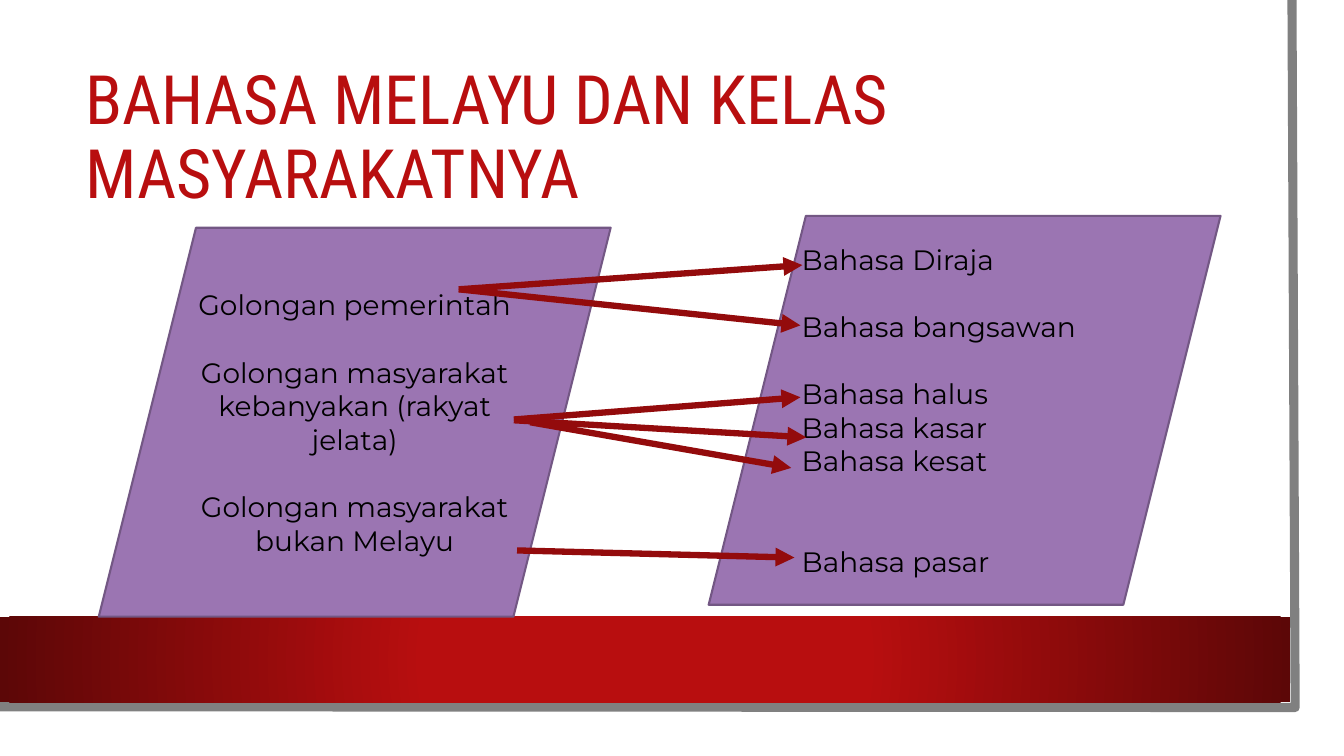
from dataclasses import dataclass

from pptx import Presentation
from pptx.dml.color import RGBColor
from pptx.enum.shapes import MSO_CONNECTOR as Connector, MSO_SHAPE as Preset
from pptx.enum.text import MSO_ANCHOR as Anchor, PP_ALIGN as Align
from pptx.oxml import parse_xml
from pptx.oxml.ns import nsdecls, qn
from pptx.oxml.xmlchemy import OxmlElement
from pptx.shapes.autoshape import Shape
from pptx.slide import Slide
from pptx.util import Cm, Pt

COLORS = {
    "white": "FFFFFF",
    "frame": "808080",
    "red": "B80E0F",
    "dark_red": "5C0707",
    "arrow": "930B0C",
    "purple": "9B75B2",
    "purple_edge": "735784",
    "text": "000000",
}
TITLE_FONT = "Roboto Condensed"
BODY_FONT = "Montserrat"
LINE_GAP = 24  # height of one empty body line, in points


@dataclass
class Entry:
    text: str
    lines_before: int = 0


@dataclass
class Panel:
    left: float
    top: float
    align: Align
    entries: list[Entry]


@dataclass
class Arrow:
    start: tuple[float, float]
    end: tuple[float, float]


PANELS = [
    Panel(2.49, 5.74, Align.CENTER, [
        Entry("Golongan pemerintah"),
        Entry("Golongan masyarakat kebanyakan (rakyat jelata)", 1),
        Entry("Golongan masyarakat bukan Melayu", 1),
    ]),
    Panel(17.86, 5.44, Align.LEFT, [
        Entry("Bahasa Diraja"),
        Entry("Bahasa bangsawan", 1),
        Entry("Bahasa halus", 1),
        Entry("Bahasa kasar"),
        Entry("Bahasa kesat"),
        Entry("Bahasa pasar", 2),
    ]),
]
ARROWS = [
    Arrow((11.56, 7.29), (20.22, 6.68)),
    Arrow((11.56, 7.29), (20.17, 8.2)),
    Arrow((12.95, 10.57), (20.17, 10.01)),
    Arrow((12.95, 10.59), (20.32, 11.02)),
    Arrow((13.36, 10.64), (19.94, 11.79)),
    Arrow((13.03, 13.87), (20.02, 14.05)),
]


def color(name: str) -> RGBColor:
    return RGBColor.from_string(COLORS[name])


def add_block(page: Slide, preset: Preset, left: float, top: float,
              width: float, height: float) -> Shape:
    block = page.shapes.add_shape(preset, Cm(left), Cm(top), Cm(width), Cm(height))
    block.shadow.inherit = False
    block.line.fill.background()
    return block


def draw_backdrop(page: Slide) -> None:
    # White sheet
    sheet = add_block(page, Preset.RECTANGLE, 0, 0, 33.27, 18.47)
    sheet.fill.solid()
    sheet.fill.fore_color.rgb = color("white")

    # Grey edge along the right and bottom
    builder = page.shapes.build_freeform(Cm(32.56), Cm(0))
    corners = [(32.64, 17.83), (-0.08, 17.81)]
    builder.add_line_segments([(Cm(x), Cm(y)) for x, y in corners], close=False)
    edge = builder.convert_to_shape()
    edge.shadow.inherit = False
    edge.fill.background()
    edge.line.color.rgb = color("frame")
    edge.line.width = Pt(6.5)

    # Red band, darker towards its ends
    band = add_block(page, Preset.RECTANGLE, 0, 15.54, 32.51, 2.16)
    band.fill.gradient()
    stops = [(0.34, "red"), (1, "dark_red")]
    for stop, (position, name) in zip(band.fill.gradient_stops, stops):
        stop.position = position
        stop.color.rgb = color(name)
    direction = band.element.spPr.find(qn("a:gradFill")).find(qn("a:lin"))
    direction.getparent().replace(direction, parse_xml(
        f'<a:path {nsdecls("a")} path="circle">'
        '<a:fillToRect l="50000" t="50000" r="50000" b="50000"/></a:path>'))


def draw_title(page: Slide) -> None:
    box = page.shapes.add_textbox(Cm(1.9), Cm(1.9), Cm(28.88), Cm(3.23))
    frame = box.text_frame
    frame.word_wrap = True
    frame.vertical_anchor = Anchor.MIDDLE
    frame.text = "BAHASA MELAYU DAN KELAS MASYARAKATNYA"
    para = frame.paragraphs[0]
    para.line_spacing = 0.9
    font = para.runs[0].font
    font.name = TITLE_FONT
    font.size = Pt(48.6)
    font.color.rgb = color("red")


def draw_panel(page: Slide, panel: Panel) -> None:
    shape = add_block(page, Preset.PARALLELOGRAM, panel.left, panel.top, 12.9, 9.8)
    shape.fill.solid()
    shape.fill.fore_color.rgb = color("purple")
    shape.line.color.rgb = color("purple_edge")
    shape.line.width = Pt(1.5)
    frame = shape.text_frame
    frame.word_wrap = True
    frame.vertical_anchor = Anchor.MIDDLE
    frame.text = "\n".join(entry.text for entry in panel.entries)
    for para, entry in zip(frame.paragraphs, panel.entries):
        para.alignment = panel.align
        if entry.lines_before:
            para.space_before = Pt(LINE_GAP * entry.lines_before)
        font = para.runs[0].font
        font.name = BODY_FONT
        font.size = Pt(20)
        font.color.rgb = color("text")


def draw_arrow(page: Slide, arrow: Arrow) -> None:
    ends = [Cm(value) for value in arrow.start + arrow.end]
    connector = page.shapes.add_connector(Connector.STRAIGHT, *ends)
    connector.line.color.rgb = color("arrow")
    connector.line.width = Pt(4.5)
    head = OxmlElement("a:tailEnd")
    head.set("type", "triangle")
    connector.line._get_or_add_ln().append(head)
    connector.element.spPr.append(OxmlElement("a:effectLst"))


def main() -> None:
    deck = Presentation()
    deck.slide_width, deck.slide_height = Cm(33.87), Cm(19.05)
    page = deck.slides.add_slide(deck.slide_layouts[6])
    draw_backdrop(page)
    draw_title(page)
    for panel in PANELS:
        draw_panel(page, panel)
    for arrow in ARROWS:
        draw_arrow(page, arrow)
    deck.save("out.pptx")


if __name__ == "__main__":
    main()
